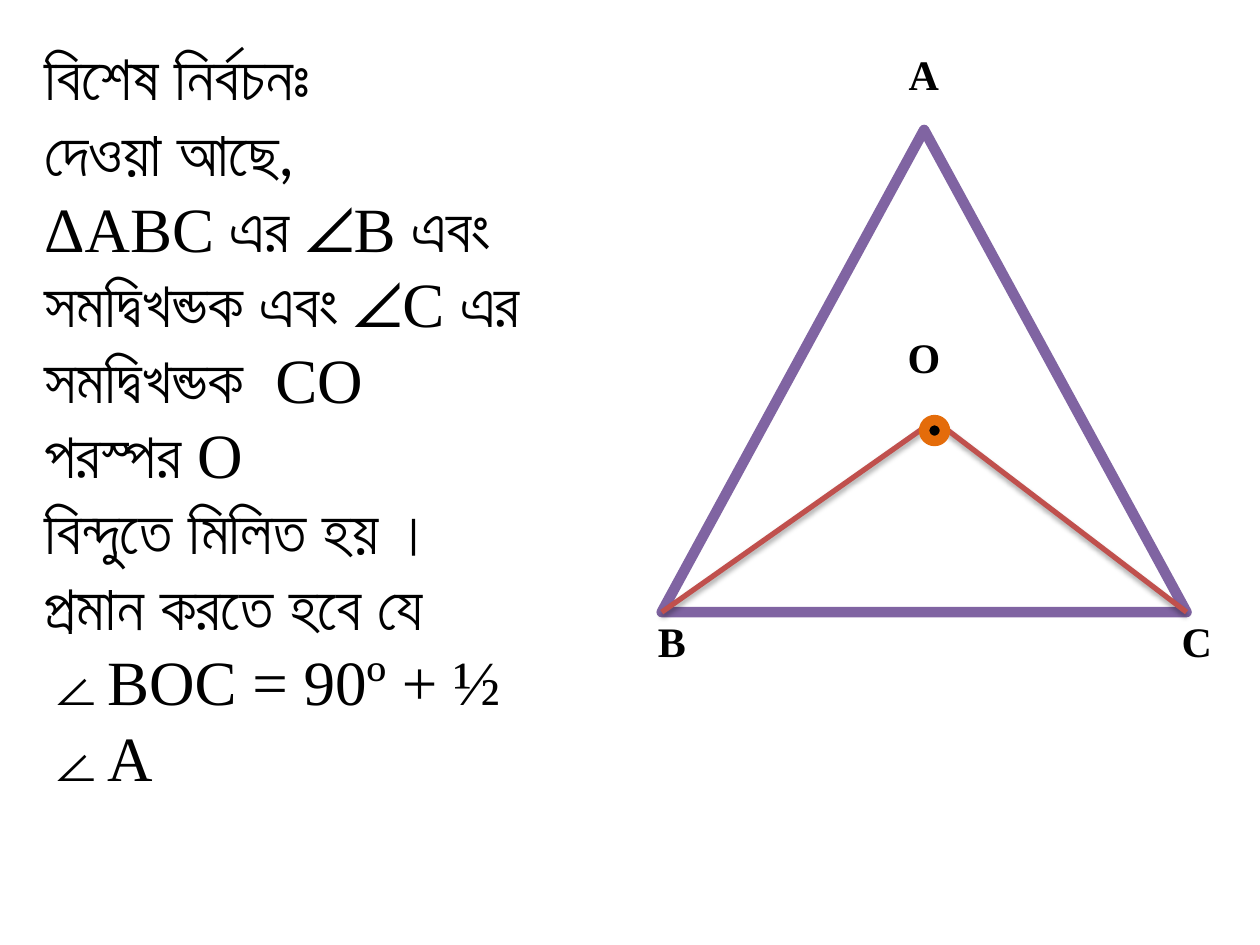
import pptx
import pptx.dml.color
import pptx.enum.shapes
import pptx.enum.text
import pptx.oxml
import pptx.util
from pptx.util import Cm

SHADOW = (
    '<a:effectLst xmlns:a="http://schemas.openxmlformats.org/drawingml/2006/main">'
    '<a:outerShdw blurRad="40000" dist="23000" dir="5400000" rotWithShape="0">'
    '<a:srgbClr val="000000"><a:alpha val="35000"/></a:srgbClr>'
    '</a:outerShdw></a:effectLst>'
)
BENGALI = "Lato"
LATIN = "Times New Roman"


def paint(color_format, color):
    color_format.rgb = pptx.dml.color.RGBColor.from_string(color)


def format_run(run, font_name, size, bold=False):
    run.font.name = font_name
    run.font.size = pptx.util.Pt(size)
    run.font.bold = bold
    paint(run.font.color, "000000")


presentation = pptx.Presentation()
presentation.slide_width = Cm(25.4)
presentation.slide_height = Cm(19.05)
slide = presentation.slides.add_slide(presentation.slide_layouts[6])
shapes = slide.shapes

# Triangle ABC
left, top, width, height = 13.34, 2.62, 10.58, 9.72
triangle = shapes.add_shape(
    pptx.enum.shapes.MSO_SHAPE.ISOSCELES_TRIANGLE,
    Cm(left), Cm(top), Cm(width), Cm(height))
triangle.adjustments[0] = 0.5
triangle.shadow.inherit = False
triangle.fill.solid()
paint(triangle.fill.fore_color, "FFFFFF")
paint(triangle.line.color, "8064A2")
triangle.line.width = pptx.util.Pt(6)

# Bisectors BO and CO
bisectors = []
for corner_x in (left, left + width):
    bisector = shapes.add_connector(
        pptx.enum.shapes.MSO_CONNECTOR.STRAIGHT,
        Cm(corner_x), Cm(top + height), Cm(18.84), Cm(8.47))
    paint(bisector.line.color, "C0504D")
    bisector.line.width = pptx.util.Pt(3)
    bisector._element.spPr.append(pptx.oxml.parse_xml(SHADOW))
    bisectors.append(bisector)

# Point O
point = shapes.add_shape(
    pptx.enum.shapes.MSO_SHAPE.FLOWCHART_CONNECTOR,
    Cm(18.63), Cm(8.47), Cm(0.42), Cm(0.42))
point.shadow.inherit = False
point.fill.solid()
paint(point.fill.fore_color, "000000")
paint(point.line.color, "E46C0A")
point.line.width = pptx.util.Pt(6)
for bisector in bisectors:
    bisector.end_connect(point, 0)

# Point names
for name, x, y in (("A", 17.78, 0.64), ("B", 12.7, 12.07),
                   ("C", 23.28, 12.07), ("O", 17.78, 6.35)):
    label = shapes.add_textbox(Cm(x), Cm(y), Cm(1.69), Cm(1.69))
    text_frame = label.text_frame
    text_frame.word_wrap = True
    text_frame.vertical_anchor = pptx.enum.text.MSO_ANCHOR.MIDDLE
    text_frame.text = name
    paragraph = text_frame.paragraphs[0]
    paragraph.alignment = pptx.enum.text.PP_ALIGN.CENTER
    format_run(paragraph.runs[0], LATIN, 24, bold=True)

# Statement of the problem
statement = [
    [("বিশেষ নির্বচনঃ", BENGALI)],
    [("দেওয়া আছে,", BENGALI)],
    [("ΔABC ", LATIN), ("এর ", BENGALI), ("∠B", LATIN),
     (" এবং সমদ্বিখন্ডক এবং ", BENGALI), ("∠C ", LATIN),
     ("এর সমদ্বিখন্ডক  ", BENGALI), ("CO", LATIN)],
    [("পরস্পর ", BENGALI), ("O", LATIN)],
    [("বিন্দুতে মিলিত হয় ।", BENGALI)],
    [("প্রমান করতে হবে যে", BENGALI)],
    [("∠BOC = 90º + ½ ∠A", LATIN)],
]
statement_box = shapes.add_textbox(Cm(0.64), Cm(0.64), Cm(12.06), Cm(15.65))
statement_box.fill.solid()
paint(statement_box.fill.fore_color, "FFFFFF")
text_frame = statement_box.text_frame
text_frame.word_wrap = True
for index, pieces in enumerate(statement):
    paragraph = text_frame.add_paragraph() if index else text_frame.paragraphs[0]
    for text, font_name in pieces:
        run = paragraph.add_run()
        run.text = text
        format_run(run, font_name, 36)

presentation.save("out.pptx")
